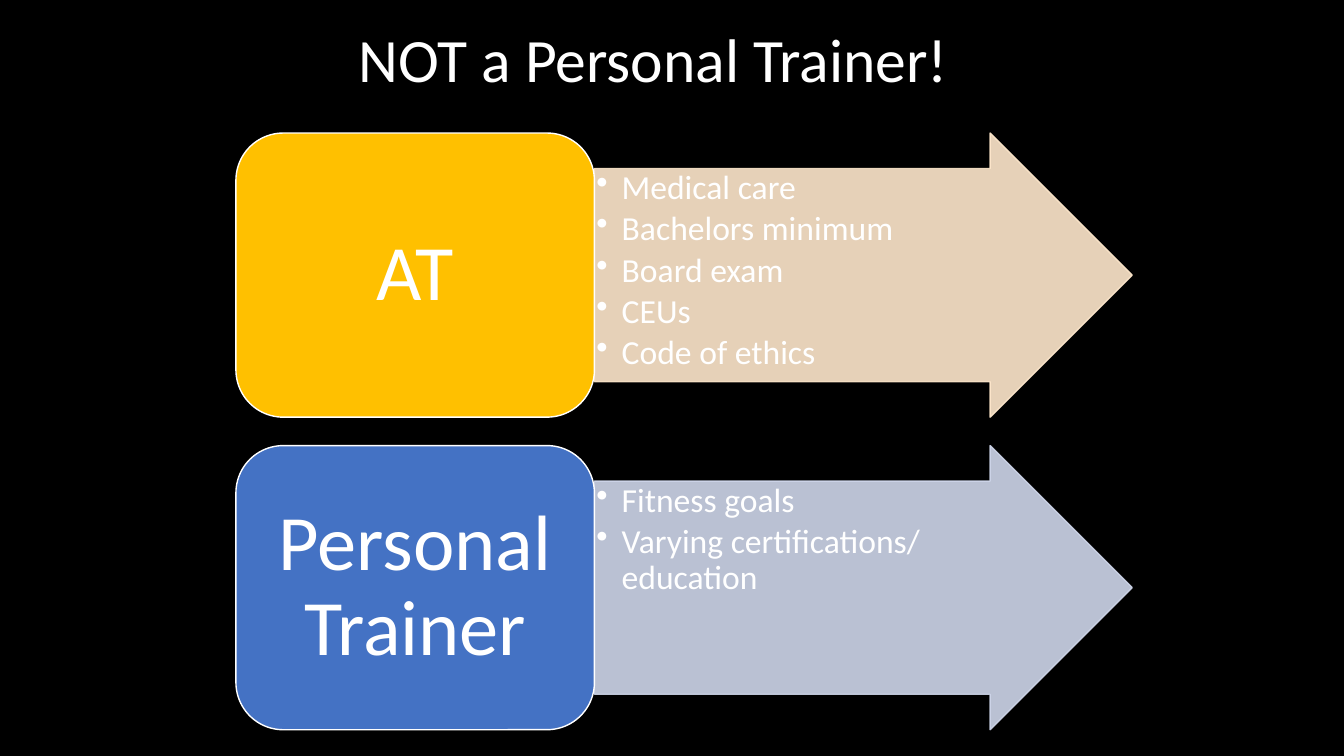
from dataclasses import dataclass

from lxml import etree
from pptx import Presentation
from pptx.dml.color import RGBColor
from pptx.enum.shapes import MSO_SHAPE
from pptx.enum.text import MSO_ANCHOR, PP_ALIGN
from pptx.oxml.ns import qn
from pptx.util import Inches, Pt

ARROW = MSO_SHAPE.RIGHT_ARROW
ROUNDED = MSO_SHAPE.ROUNDED_RECTANGLE
TOP, MIDDLE = MSO_ANCHOR.TOP, MSO_ANCHOR.MIDDLE
LEFT, CENTER = PP_ALIGN.LEFT, PP_ALIGN.CENTER


@dataclass(frozen=True)
class Theme:
    font: str = "Calibri"
    background: str = "000000"
    text: str = "FFFFFF"
    gold: str = "FFC000"
    pale_gold: str = "FFE8CC"
    blue: str = "4472C4"
    pale_blue: str = "CFD6EA"
    title_size: int = 44
    label_size: int = 56
    bullet_size: int = 24
    arrow_opacity: int = 90


THEME = Theme()

# Label, bullets, label colour, arrow colour
ROLES = [
    ("AT",
     ["Medical care", "Bachelors minimum", "Board exam", "CEUs", "Code of ethics"],
     THEME.gold, THEME.pale_gold),
    ("Personal Trainer",
     ["Fitness goals", "Varying certifications/ education"],
     THEME.blue, THEME.pale_blue),
]


def set_opacity(color_format, percent):
    """Make a solid fill or line colour partly transparent."""
    for color in color_format.iter(qn("a:srgbClr")):
        etree.SubElement(color, qn("a:alpha"), val=str(percent * 1000))


def add_bullet(para):
    """Hang a round bullet a quarter inch before the paragraph."""
    props = para._p.get_or_add_pPr()
    props.set("marL", str(Inches(0.25)))
    props.set("indent", str(-Inches(0.25)))
    etree.SubElement(props, qn("a:buChar"), char="•")


def add_block(page, kind, left, top, width, height, fill, line):
    block = page.shapes.add_shape(
        kind, Inches(left), Inches(top), Inches(width), Inches(height))
    block.shadow.inherit = False
    block.fill.solid()
    block.fill.fore_color.rgb = RGBColor.from_string(fill)
    block.line.color.rgb = RGBColor.from_string(line)
    block.line.width = Pt(1)
    return block


def add_text(page, left, top, width, height, lines, size, inset,
             anchor=MIDDLE, align=LEFT, space_after=0, bulleted=False):
    box = page.shapes.add_textbox(
        Inches(left), Inches(top), Inches(width), Inches(height))
    frame = box.text_frame
    frame.word_wrap = True
    frame.vertical_anchor = anchor
    frame.margin_left = frame.margin_right = Inches(inset[0])
    frame.margin_top = frame.margin_bottom = Inches(inset[1])
    for number, line in enumerate(lines):
        para = frame.add_paragraph() if number else frame.paragraphs[0]
        para.alignment = align
        para.line_spacing = 0.9
        para.space_before = Pt(0)
        para.space_after = Pt(size * space_after)
        if bulleted:
            add_bullet(para)
        span = para.add_run()
        span.text = line
        span.font.name = THEME.font
        span.font.size = Pt(size)
        span.font.color.rgb = RGBColor.from_string(THEME.text)


def add_title(page, left, top, width, height):
    add_text(page, left, top, width, height, ["NOT a Personal Trainer!"],
             THEME.title_size, (0.1, 0.05))


def add_role(page, left, top, width, height, role):
    """Label block on the left two fifths, arrow with bullets on the rest."""
    label, bullets, label_color, arrow_color = role
    label_width = width * 0.4
    arrow_left, arrow_width = left + label_width, width * 0.6

    # Arrow: shaft is three quarters high, head is half as long as high
    arrow = add_block(page, ARROW, arrow_left, top, arrow_width, height,
                      arrow_color, arrow_color)
    arrow.adjustments[0], arrow.adjustments[1] = 0.75, 0.5
    set_opacity(arrow._element.spPr, THEME.arrow_opacity)

    # Bullets fill the shaft and the part of the head beside it
    add_text(page, arrow_left, top + height / 8,
             arrow_width - height * 0.375, height * 0.75,
             bullets, THEME.bullet_size, (0.02, 0.02),
             anchor=TOP, space_after=0.15, bulleted=True)

    # Label
    add_block(page, ROUNDED, left, top, label_width, height,
              label_color, THEME.text)
    margin = 0.14
    add_text(page, left + margin, top + margin,
             label_width - 2 * margin, height - 2 * margin,
             [label], THEME.label_size, (0.23, 0.12),
             align=CENTER, space_after=0.35)


def add_comparison(page, left, top, width, height):
    """Stack the roles with a gap of a tenth of a row between them."""
    row_height = height / (len(ROLES) + 0.1 * (len(ROLES) - 1))
    for number, role in enumerate(ROLES):
        add_role(page, left, top + number * row_height * 1.1,
                 width, row_height, role)


def main():
    deck = Presentation()
    deck.slide_width, deck.slide_height = Inches(13.33), Inches(7.5)
    page = deck.slides.add_slide(deck.slide_layouts[6])
    page.background.fill.solid()
    page.background.fill.fore_color.rgb = RGBColor.from_string(THEME.background)
    add_title(page, 3.46, 0, 9, 1.25)
    add_comparison(page, 2.34, 1.32, 8.89, 5.92)
    deck.save("out.pptx")


if __name__ == "__main__":
    main()
